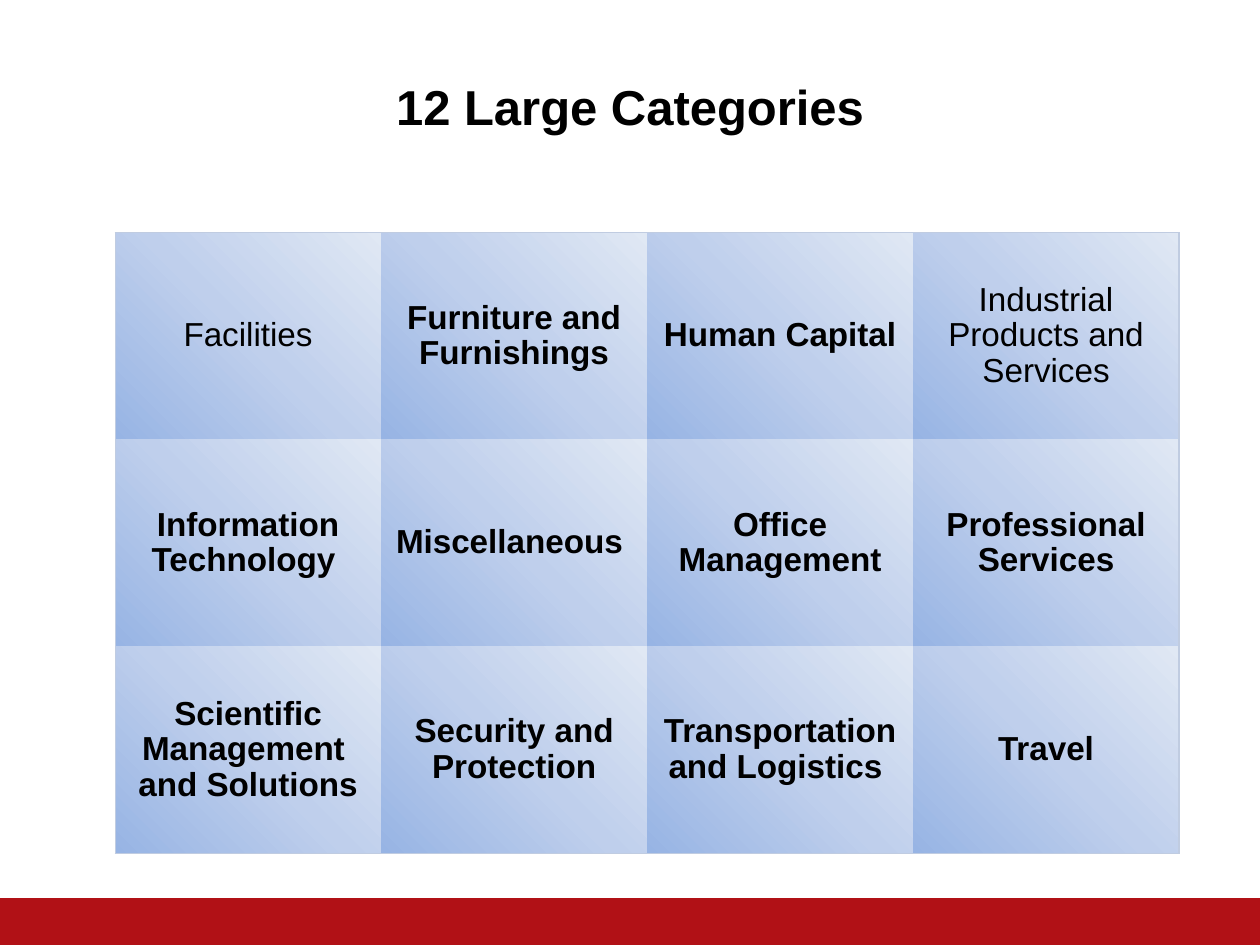
import pptx
import pptx.util
import pptx.dml.color
import pptx.enum.shapes
import pptx.enum.text
import pptx.oxml
from lxml import etree

Pt = pptx.util.Pt

TITLE = "12 Large Categories"
CATEGORIES = [
    ["Facilities", "Furniture and Furnishings", "Human Capital",
     "Industrial Products and Services"],
    ["Information Technology ", "Miscellaneous ", "Office Management",
     "Professional Services"],
    ["Scientific Management  and Solutions", "Security and Protection",
     "Transportation and Logistics ", "Travel"],
]
REGULAR = {"Facilities", "Industrial Products and Services"}

FONT = "Arial"
BLACK, RED, EDGE = "000000", "B11116", "C0CCE1"
GRADIENT = [(0, "97B4E4"), (50, "BFCFEC"), (100, "E0E8F4")]
GRADIENT_ANGLE = 315
EDGE_WIDTH = 0.75
TABLE_LEFT, TABLE_TOP = 65.75, 133
COLUMN_WIDTH, ROW_HEIGHT = 152, 118.25
NO_STYLE = "{2D5ABB26-0587-4C30-8999-92F81FD0307C}"
NAMESPACE = "http://schemas.openxmlformats.org/drawingml/2006/main"


def color(value):
    return pptx.dml.color.RGBColor.from_string(value)


def format_paragraph(paragraph, size, bold):
    paragraph.alignment = pptx.enum.text.PP_ALIGN.CENTER
    font = paragraph.font
    font.name, font.size, font.bold = FONT, Pt(size), bold
    font.color.rgb = color(BLACK)


def add_element(parent, tag, **attributes):
    element = etree.SubElement(parent, f"{{{NAMESPACE}}}{tag}")
    for name, value in attributes.items():
        element.set(name, str(value))
    return element


def paint_cell(cell, edges):
    """Draw the given outer edges, then the gradient fill, in schema order."""
    properties = cell._tc.get_or_add_tcPr()
    for tag, drawn in edges.items():
        if drawn:
            line = add_element(properties, tag, w=Pt(EDGE_WIDTH))
            add_element(add_element(line, "solidFill"), "srgbClr", val=EDGE)
    gradient = add_element(properties, "gradFill", rotWithShape=1)
    stops = add_element(gradient, "gsLst")
    for position, value in GRADIENT:
        stop = add_element(stops, "gs", pos=position * 1000)
        add_element(stop, "srgbClr", val=value)
    add_element(gradient, "lin", ang=GRADIENT_ANGLE * 60000, scaled=0)


def add_bar(slide):
    bar = slide.shapes.add_shape(pptx.enum.shapes.MSO_SHAPE.RECTANGLE,
                                 Pt(0), Pt(513.25), Pt(720), Pt(26.75))
    bar.shadow.inherit = False
    bar.fill.solid()
    bar.fill.fore_color.rgb = color(RED)
    bar.line.fill.background()


def add_title(slide):
    title = slide.shapes.title
    title.left, title.top, title.width, title.height = map(Pt, (36, 33, 648, 66))
    frame = title.text_frame
    frame.text = TITLE
    frame.vertical_anchor = pptx.enum.text.MSO_ANCHOR.TOP
    frame.margin_left = frame.margin_right = frame.margin_bottom = Pt(7.2)
    frame.margin_top = Pt(10.8)
    format_paragraph(frame.paragraphs[0], 28, True)


def add_categories(slide):
    rows, columns = len(CATEGORIES), len(CATEGORIES[0])
    frame = slide.shapes.add_table(rows, columns, Pt(TABLE_LEFT), Pt(TABLE_TOP),
                                   Pt(COLUMN_WIDTH * columns), Pt(ROW_HEIGHT * rows))
    table = frame.table
    table.first_row = table.horz_banding = False
    table._tbl.tblPr.find(f"{{{NAMESPACE}}}tableStyleId").text = NO_STYLE
    for column in table.columns:
        column.width = Pt(COLUMN_WIDTH)
    for row in table.rows:
        row.height = Pt(ROW_HEIGHT)
    for r, names in enumerate(CATEGORIES):
        for c, name in enumerate(names):
            cell = table.cell(r, c)
            cell.text = name
            cell.vertical_anchor = pptx.enum.text.MSO_ANCHOR.MIDDLE
            paragraph = cell.text_frame.paragraphs[0]
            paragraph.line_spacing = 0.96
            format_paragraph(paragraph, 19, name not in REGULAR)
            paint_cell(cell, {"lnL": c == 0, "lnR": c == columns - 1,
                              "lnT": r == 0, "lnB": r == rows - 1})


def main():
    presentation = pptx.Presentation()
    presentation.slide_width, presentation.slide_height = Pt(720), Pt(540)
    slide = presentation.slides.add_slide(presentation.slide_layouts[5])
    add_bar(slide)
    add_title(slide)
    add_categories(slide)
    presentation.save("out.pptx")


if __name__ == "__main__":
    main()
